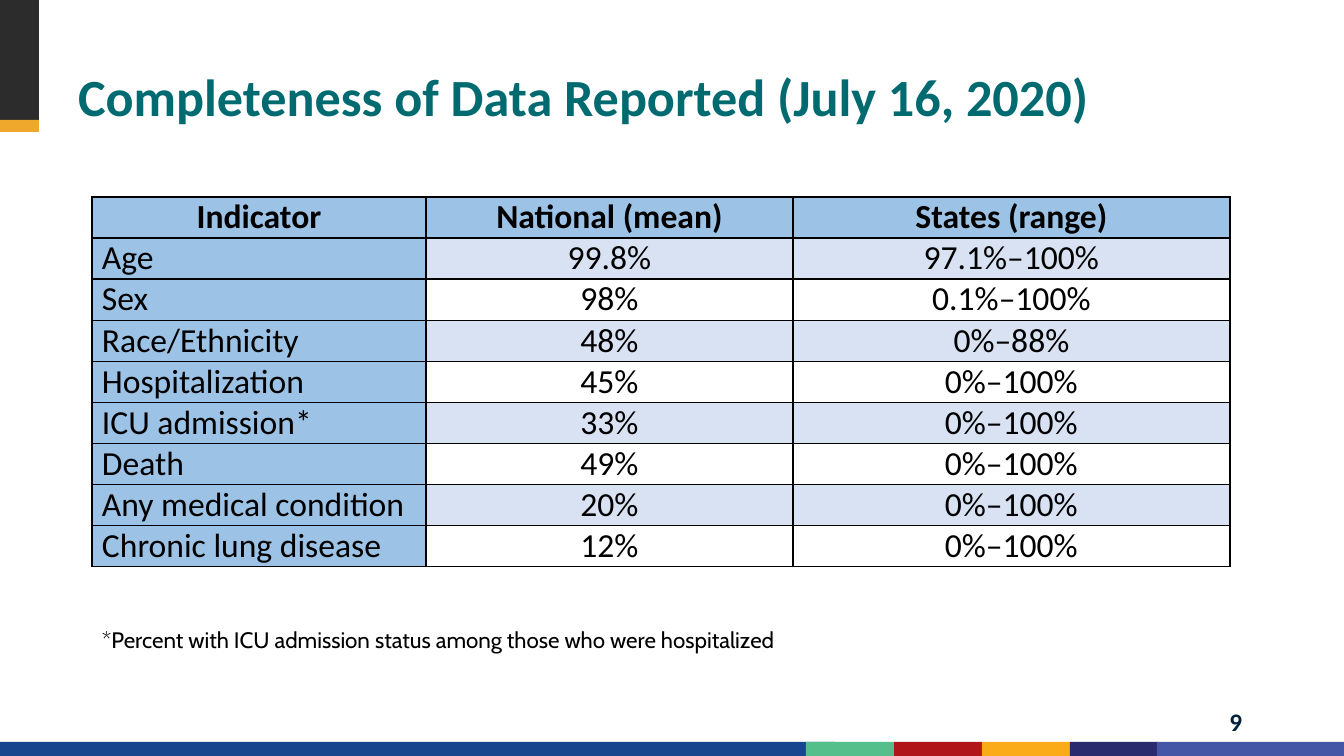
from lxml import etree
from pptx import Presentation
from pptx.dml.color import RGBColor
from pptx.enum.shapes import MSO_SHAPE
from pptx.enum.text import MSO_ANCHOR, MSO_AUTO_SIZE, PP_ALIGN
from pptx.oxml.ns import qn
from pptx.util import Pt

RECT = MSO_SHAPE.RECTANGLE
TOP, BOTTOM = MSO_ANCHOR.TOP, MSO_ANCHOR.BOTTOM
LEFT, CENTER, RIGHT = PP_ALIGN.LEFT, PP_ALIGN.CENTER, PP_ALIGN.RIGHT
NO_FIT = MSO_AUTO_SIZE.NONE

WIDE, HIGH = 1344, 756
SCALE = 12192000 / WIDE
HEX = {
    "black": "000000", "teal": "006A71", "ink": "00213D",
    "head": "9CC2E5", "band": "D9E2F3",
    "red": "B01519", "amber": "FBAB18", "navy": "292B6E",
    "violet": "4656A6", "blue": "17468F", "green": "55BF8B",
    "dark": "2D2C2C", "gold": "F0A82C",
}


def px(*sizes):
    return [round(size * SCALE) for size in sizes]


def write(frame, text, align, size, color, bold=False, font="Calibri"):
    para = frame.paragraphs[0]
    para.alignment = align
    run = para.add_run()
    run.text = text
    style = {"name": font, "size": Pt(size), "bold": bold}
    for name, value in style.items():
        setattr(run.font, name, value)
    run.font.color.rgb = RGBColor.from_string(HEX[color])
    return para


deck = Presentation()
deck.slide_width, deck.slide_height = px(WIDE, HIGH)
slide = deck.slides.add_slide(deck.slide_layouts[5])
shapes = slide.shapes

blocks = [
    ("red", 894, 742, 88, 14),
    ("amber", 982, 742, 88, 14),
    ("navy", 1070, 742, 88, 14),
    ("violet", 1157, 742, 187, 14),
    ("blue", 0, 742, 835, 14),
    ("green", 806, 742, 88, 14),
    ("dark", 0, 0, 39, 120),
    ("gold", 0, 120, 39, 12),
]
for color, *box in blocks:
    block = shapes.add_shape(RECT, *px(*box))
    block.shadow.inherit = False
    block.fill.solid()
    block.fill.fore_color.rgb = RGBColor.from_string(HEX[color])
    block.line.fill.background()

title = shapes.title
title.left, title.top, title.width, title.height = px(68, 30, 1210, 102)
frame = title.text_frame
layout = {"word_wrap": True, "auto_size": NO_FIT, "vertical_anchor": BOTTOM}
for name, value in layout.items():
    setattr(frame, name, value)
para = write(frame, "Completeness of Data Reported (July 16, 2020)",
             LEFT, 37.3, "teal", True)
para.line_spacing = Pt(40)

rows = [
    ("Indicator", "National (mean)", "States (range)"),
    ("Age", "99.8%", "97.1%–100%"),
    ("Sex", "98%", "0.1%–100%"),
    ("Race/Ethnicity", "48%", "0%–88%"),
    ("Hospitalization", "45%", "0%–100%"),
    ("ICU admission*", "33%", "0%–100%"),
    ("Death", "49%", "0%–100%"),
    ("Any medical condition", "20%", "0%–100%"),
    ("Chronic lung disease", "12%", "0%–100%"),
]
table = shapes.add_table(len(rows), 3, *px(92, 197, 1138, 363)).table
table.first_row = table.horz_banding = False
for column, width in zip(table.columns, px(334, 367, 437)):
    column.width = width

inset, none = px(10, 0)
margins = {"margin_left": inset, "margin_right": inset,
           "margin_top": none, "margin_bottom": none, "vertical_anchor": TOP}
for r, row in enumerate(rows):
    for c, text in enumerate(row):
        cell = table.cell(r, c)
        for name, value in margins.items():
            setattr(cell, name, value)
        props = cell._tc.get_or_add_tcPr()
        for side in ("a:lnL", "a:lnR", "a:lnT", "a:lnB"):
            line = etree.SubElement(props, qn(side), w=str(Pt(1)))
            solid = etree.SubElement(line, qn("a:solidFill"))
            etree.SubElement(solid, qn("a:srgbClr"), val=HEX["black"])
        if r == 0 or c == 0 or r % 2:
            color = "head" if r == 0 or c == 0 else "band"
            cell.fill.solid()
            cell.fill.fore_color.rgb = RGBColor.from_string(HEX[color])
        else:
            cell.fill.background()
        align = LEFT if r and c == 0 else CENTER
        write(cell.text_frame, text, align, 24, "black", r == 0)

notes = [
    ((950, 701, 302, 40), "9", RIGHT, 18, "ink", True, "Calibri"),
    ((92, 621, 773, 37),
     "*Percent with ICU admission status among those who were hospitalized",
     LEFT, 16, "black", False, "Cabin"),
]
for box, *style in notes:
    frame = shapes.add_textbox(*px(*box)).text_frame
    frame.word_wrap = True
    write(frame, *style)

deck.save("out.pptx")
